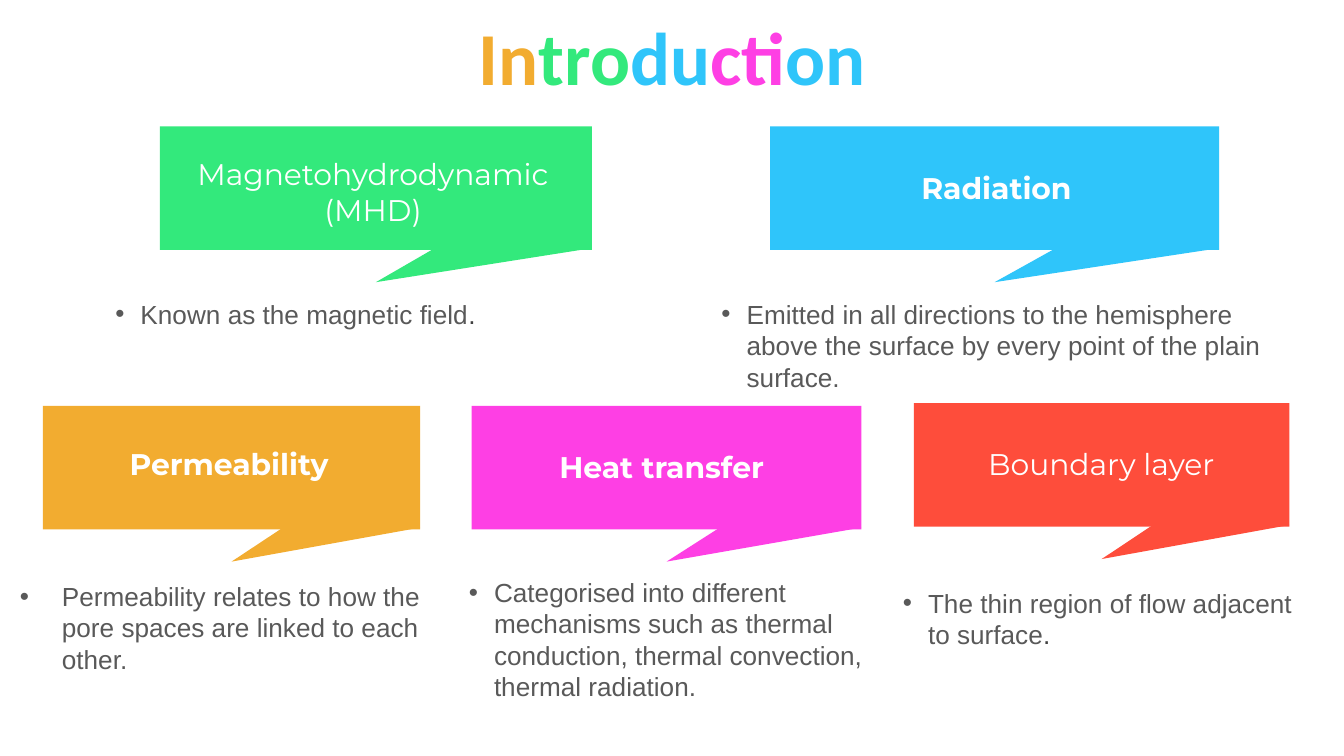
from lxml import etree
from pptx import Presentation
from pptx.dml.color import RGBColor
from pptx.enum.shapes import MSO_SHAPE
from pptx.enum.text import MSO_ANCHOR, MSO_AUTO_SIZE, PP_ALIGN
from pptx.oxml.ns import qn
from pptx.util import Pt

RECT = MSO_SHAPE.RECTANGLE
MIDDLE = MSO_ANCHOR.MIDDLE
FIT, NO_FIT = MSO_AUTO_SIZE.SHAPE_TO_FIT_TEXT, MSO_AUTO_SIZE.NONE
LEFT, CENTER = PP_ALIGN.LEFT, PP_ALIGN.CENTER

GREEN, BLUE, ORANGE, PINK, RED = "33E97C", "2FC5FA", "F2AC30", "FE3FE4", "FE4D3B"
WHITE, GRAY, DARK = "FFFFFF", "595959", "404040"
BUBBLE_H, TAIL_TOP, TAIL_TIP = 66.2, 64.8, 83.5

TITLE = [("In", ORANGE), ("tro", GREEN), ("du", BLUE), ("cti", PINK), ("on", BLUE)]

TOPICS = [
    {"color": GREEN, "bubble": (85.7, 67.7, 231.4),
     "label": ["Magnetohydrodynamic ", "(MHD) "], "bold": False,
     "label_box": (93.6, 79.9, 216.7, 46),
     "note": [("Known as the magnetic field", GRAY), (".", DARK)],
     "note_box": (54.7, 156.2, 306.7, 24.2), "indent": 13.5},
    {"color": BLUE, "bubble": (412.6, 67.7, 240.5),
     "label": ["Radiation"], "bold": True,
     "label_box": (478.1, 87.1, 111.6, 26.6),
     "note": [("Emitted in all directions to the hemisphere above the surface "
               "by every point of the plain surface.", GRAY)],
     "note_box": (379.4, 156.2, 308.2, 58.3), "indent": 13.5},
    {"color": ORANGE, "bubble": (23, 217.4, 202.1),
     "label": ["Permeability"], "bold": True,
     "label_box": (32.4, 235.4, 180.7, 26.6),
     "note": [("Permeability relates to how the pore spaces are linked "
               "to each other.", GRAY)],
     "note_box": (3.6, 307.4, 240.5, 58.3), "indent": 22.5},
    {"color": PINK, "bubble": (252.7, 217.4, 208.8),
     "label": ["Heat transfer "], "bold": True,
     "label_box": (263.5, 236.9, 186.5, 26.6),
     "note": [("Categorised into different mechanisms such as thermal "
               "conduction, thermal convection, thermal radiation.", GRAY)],
     "note_box": (244.1, 305.3, 226.1, 74.9), "indent": 13.5},
    {"color": RED, "bubble": (489.6, 216, 201.2),
     "label": ["Boundary layer"], "bold": False,
     "label_box": (481.7, 235.4, 216.7, 26.6),
     "note": [("The thin region of flow adjacent to surface", GRAY), (".", DARK)],
     "note_box": (476.6, 311, 234, 41), "indent": 13.5},
]


def rgb(value):
    """Return the colour for a hex string."""
    return RGBColor.from_string(value)


def paint(shape, color):
    """Fill a shape flatly, with no line or shadow."""
    shape.fill.solid()
    shape.fill.fore_color.rgb = rgb(color)
    shape.line.fill.background()
    shape.shadow.inherit = False


def add_bubble(s, x, y, w, color):
    """Draw a rectangle with a tail that points to its middle."""
    paint(s.shapes.add_shape(RECT, Pt(x), Pt(y), Pt(w), Pt(BUBBLE_H)), color)
    fb = s.shapes.build_freeform(Pt(x + 0.64 * w), Pt(y + TAIL_TOP))
    fb.add_line_segments([(Pt(x + w / 2), Pt(y + TAIL_TIP)),
                          (Pt(x + w), Pt(y + TAIL_TOP + 0.5))], close=True)
    paint(fb.convert_to_shape(), color)


def add_text(s, box, paragraphs, font, size, align, bold=False):
    """Add a wrapped text box and return its text frame."""
    tf = s.shapes.add_textbox(*map(Pt, box)).text_frame
    tf.word_wrap = True
    tf.auto_size = FIT
    for i, runs in enumerate(paragraphs):
        p = tf.add_paragraph() if i else tf.paragraphs[0]
        write(p, runs, font, size, align, bold)
    return tf


def write(p, runs, font, size, align, bold):
    """Fill a paragraph with coloured runs in one font."""
    p.alignment = align
    p.font.name, p.font.size, p.font.bold = font, Pt(size), bold
    for text, color in runs:
        r = p.add_run()
        r.text = text
        r.font.color.rgb = rgb(color)


def add_bullet(p, indent):
    """Give a paragraph a hanging round bullet."""
    pPr = p._p.get_or_add_pPr()
    pPr.set("marL", str(Pt(indent)))
    pPr.set("indent", str(-Pt(indent)))
    font = etree.Element(qn("a:buFont"), typeface="Arial")
    char = etree.Element(qn("a:buChar"), char="•")
    pPr.insert(0, font)
    pPr.insert(1, char)


def main():
    """Build the slide."""
    prs = Presentation()
    prs.slide_width, prs.slide_height = Pt(720), Pt(405)
    s = prs.slides.add_slide(prs.slide_layouts[5])

    title = s.shapes.title
    title.left, title.top, title.width, title.height = Pt(0), Pt(4.3), Pt(720), Pt(51)
    tf = title.text_frame
    tf.auto_size, tf.vertical_anchor = NO_FIT, MIDDLE
    write(tf.paragraphs[0], TITLE, "Calibri", 40, CENTER, True)

    for topic in TOPICS:
        add_bubble(s, *topic["bubble"], topic["color"])
        lines = [[(line, WHITE)] for line in topic["label"]]
        add_text(s, topic["label_box"], lines, "Montserrat", 16, CENTER, topic["bold"])
        tf = add_text(s, topic["note_box"], [topic["note"]], "Arial", 14, LEFT)
        add_bullet(tf.paragraphs[0], topic["indent"])

    prs.save("out.pptx")


if __name__ == "__main__":
    main()
